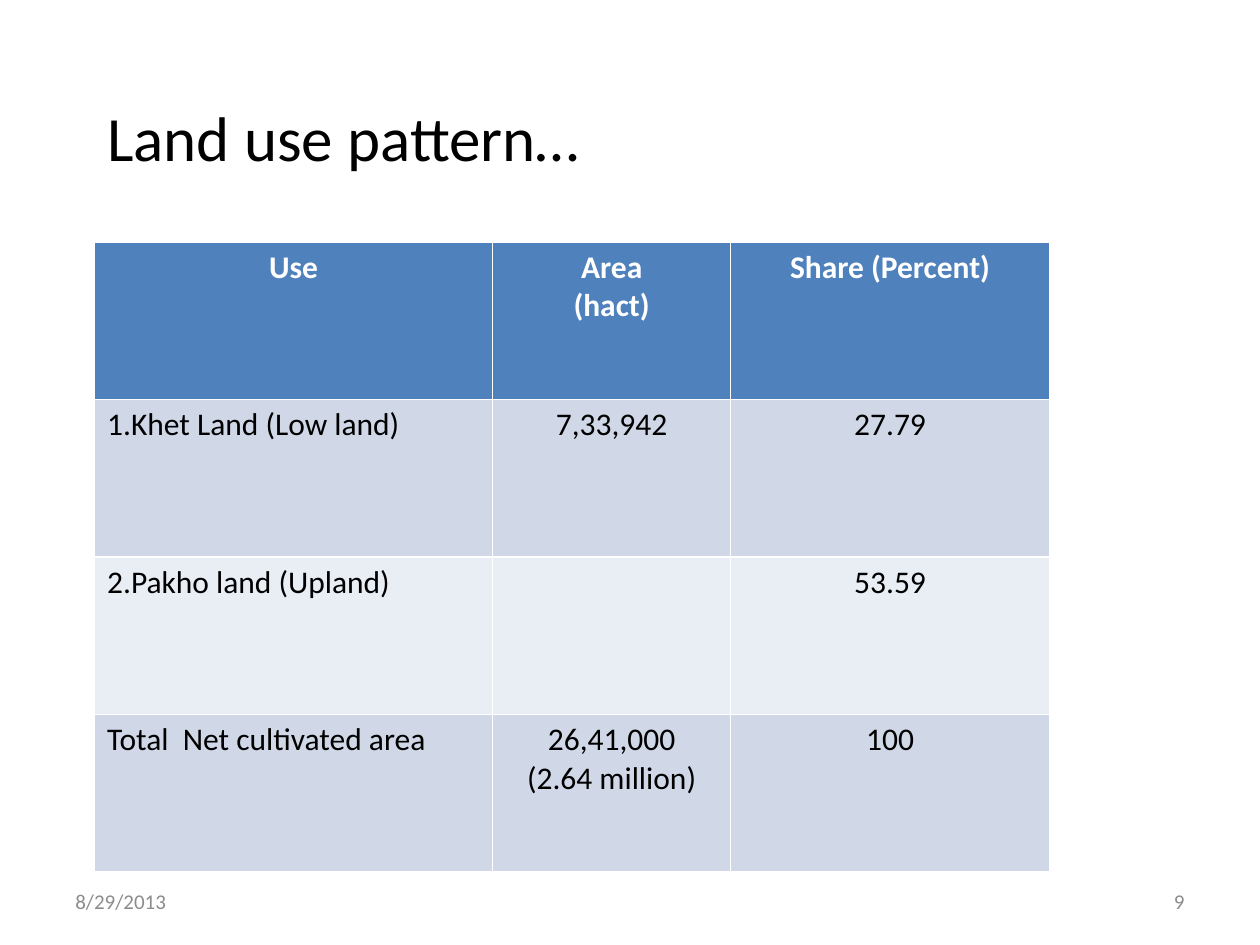
from pptx import Presentation
from pptx.dml.color import RGBColor
from pptx.enum import text
from pptx.util import Inches, Pt

FONT = "Calibri"
HEADER_FILL = "4F81BD"
BAND_FILLS = ["D0D8E8", "E9EDF4"]
COLUMN_WIDTHS = [3.16, 1.89, 2.53]
LAND_USE = [
    ["Use", "Area\n(hact)", "Share (Percent)"],
    ["1.Khet Land (Low land)", "7,33,942", "27.79"],
    ["2.Pakho land (Upland)", "", "53.59"],
    ["Total  Net cultivated area", "26,41,000\n(2.64 million)", "100"],
]


def color(hex_value):
    return RGBColor.from_string(hex_value)


def write(text_frame, content, size, hex_value, align, bold=False):
    text_frame.text = content
    for paragraph in text_frame.paragraphs:
        paragraph.alignment = align
        for run in paragraph.runs:
            run.font.name = FONT
            run.font.size = Pt(size)
            run.font.bold = bold
            run.font.color.rgb = color(hex_value)


def place_title(slide, left, top, width, height):
    title = slide.shapes.title
    title.left, title.top = Inches(left), Inches(top)
    title.width, title.height = Inches(width), Inches(height)
    write(title.text_frame, "Land use pattern…", 36, "000000", text.PP_ALIGN.LEFT)
    title.text_frame.vertical_anchor = text.MSO_ANCHOR.MIDDLE


def add_land_table(slide, left, top, width, height):
    frame = slide.shapes.add_table(len(LAND_USE), len(COLUMN_WIDTHS), Inches(left),
                                   Inches(top), Inches(width), Inches(height))
    table = frame.table
    for column, column_width in zip(table.columns, COLUMN_WIDTHS):
        column.width = Inches(column_width)
    for r, row in enumerate(LAND_USE):
        header = r == 0
        for c, content in enumerate(row):
            cell = table.cell(r, c)
            cell.fill.solid()
            cell.fill.fore_color.rgb = color(HEADER_FILL if header else BAND_FILLS[(r - 1) % 2])
            centered = header or c > 0
            align = text.PP_ALIGN.CENTER if centered else text.PP_ALIGN.LEFT
            write(cell.text_frame, content, 18, "FFFFFF" if header else "000000", align, header)


def add_footer(slide, content, align, left, top, width, height):
    box = slide.shapes.add_textbox(Inches(left), Inches(top), Inches(width), Inches(height))
    box.text_frame.word_wrap = True
    box.text_frame.vertical_anchor = text.MSO_ANCHOR.MIDDLE
    write(box.text_frame, content, 12, "8C8C8C", align)


def main():
    presentation = Presentation()
    presentation.slide_width, presentation.slide_height = Inches(10), Inches(7.5)
    slide = presentation.slides.add_slide(presentation.slide_layouts.get_by_name("Title Only"))

    place_title(slide, 0.75, 0.67, 8.5, 0.83)
    add_land_table(slide, 0.75, 1.92, sum(COLUMN_WIDTHS), 5)

    # Date and slide number
    add_footer(slide, "8/29/2013", text.PP_ALIGN.LEFT, 0.5, 6.95, 2.33, 0.4)
    add_footer(slide, "9", text.PP_ALIGN.RIGHT, 7.17, 6.95, 2.33, 0.4)

    presentation.save("out.pptx")


if __name__ == "__main__":
    main()
